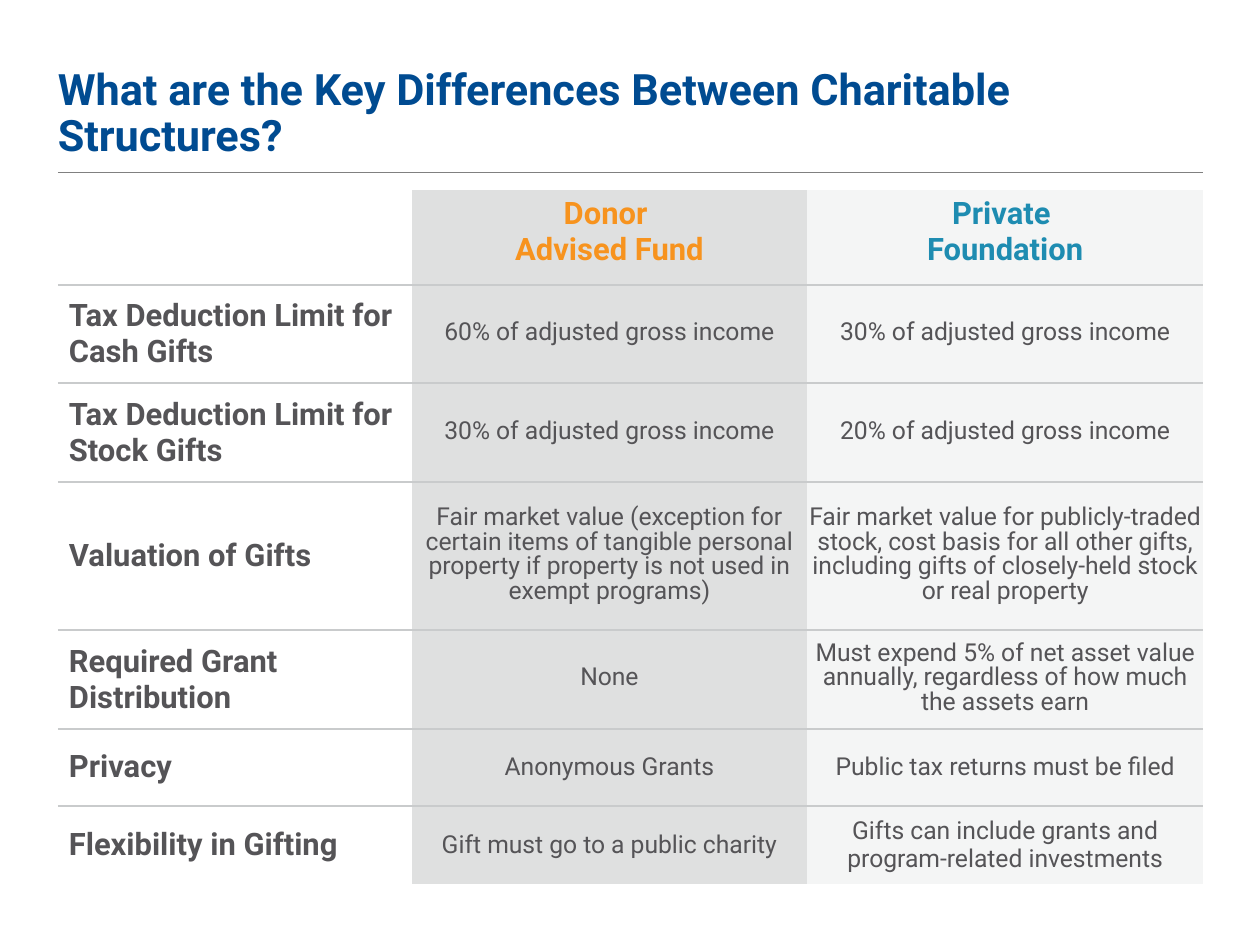
from lxml import etree
from pptx import Presentation
from pptx.dml.color import RGBColor
from pptx.enum.shapes import MSO_CONNECTOR as Connector
from pptx.enum.text import MSO_ANCHOR as Anchor, MSO_AUTO_SIZE as AutoSize, PP_ALIGN as Align
from pptx.oxml.ns import qn
from pptx.util import Cm, Pt

NAVY = RGBColor(0x00, 0x4B, 0x91)
ORANGE = RGBColor(0xF7, 0x93, 0x1E)
TEAL = RGBColor(0x1E, 0x8C, 0xB1)
INK = RGBColor(0x55, 0x54, 0x57)
RULE_GRAY = RGBColor(0x80, 0x80, 0x80)
BORDER = RGBColor(0xC9, 0xCB, 0xCC)
FUND_FILL = RGBColor(0xDF, 0xE0, 0xE0)
FOUNDATION_FILL = RGBColor(0xF4, 0xF5, 0xF5)
COLUMN_FILLS = [None, FUND_FILL, FOUNDATION_FILL]

NO_STYLE = "{2D5ABB26-0587-4C30-8999-92F81FD0307C}"
COLUMN_WIDTHS = [8.08, 9.04, 9.04]
ROW_HEIGHTS = [2.16, 2.26, 2.26, 3.38, 2.26, 1.75, 1.8]
TIGHT_ROWS = range(1, 5)

ROWS = [
    ["", "Donor \nAdvised Fund", "Private \nFoundation"],
    ["Tax Deduction Limit for Cash Gifts",
     "60% of adjusted gross income", "30% of adjusted gross income"],
    ["Tax Deduction Limit for Stock Gifts",
     "30% of adjusted gross income", "20% of adjusted gross income"],
    ["Valuation of Gifts",
     "Fair market value (exception for certain items of tangible personal "
     "property if property is not used in exempt programs)",
     "Fair market value for publicly-traded stock, cost basis for all other "
     "gifts, including gifts of closely-held stock or real property"],
    ["Required Grant Distribution", "None",
     "Must expend 5% of net asset value annually, regardless of how much "
     "the assets earn"],
    ["Privacy", "Anonymous Grants", "Public tax returns must be filed"],
    ["Flexibility in Gifting", "Gift must go to a public charity",
     "Gifts can include grants and program-related investments"],
]

# Text formats
HEADING = {"size": Pt(20), "bold": True}
VALUE = {"size": Pt(16), "bold": False}
HEADER_COLORS = [INK, ORANGE, TEAL]
LABEL_PARA = {"alignment": Align.LEFT, "space_after": Pt(12)}
VALUE_PARA = {"alignment": Align.CENTER, "space_after": Pt(12)}
TIGHT_PARA = VALUE_PARA | {"line_spacing": Pt(15.8), "space_before": Pt(7.5)}
HEADER_PARA = {"alignment": Align.CENTER}
NO_MARGINS = dict.fromkeys(
    ["margin_left", "margin_top", "margin_right", "margin_bottom"], 0)


def apply(target, formats):
    for name, value in formats.items():
        setattr(target, name, value)


def write(para, text, color, font_format, para_format):
    apply(para, para_format)
    for number, line in enumerate(text.split("\n")):
        if number:
            para.add_line_break()
        span = para.add_run()
        span.text = line
        apply(span.font, {"name": "Roboto"} | font_format)
        span.font.color.rgb = color


def add_border(cell, side):
    """Borders come before the fill in a cell's properties."""
    props = cell._tc.get_or_add_tcPr()
    line = etree.Element(qn(f"a:{side}"), w=str(Pt(1.5)))
    fill = etree.SubElement(line, qn("a:solidFill"))
    etree.SubElement(fill, qn("a:srgbClr"), val=str(BORDER))
    props.insert(len(props.findall(qn("a:lnT"))), line)


def fill_cell(cell, row, column, text):
    if row == 0:
        cell.vertical_anchor = Anchor.TOP
        formats = HEADER_COLORS[column], HEADING, HEADER_PARA
    else:
        cell.vertical_anchor = Anchor.MIDDLE
        if column == 0:
            formats = INK, HEADING, LABEL_PARA
        elif row in TIGHT_ROWS:
            apply(cell, NO_MARGINS)
            formats = INK, VALUE, TIGHT_PARA
        else:
            formats = INK, VALUE, VALUE_PARA
    if text:
        write(cell.text_frame.paragraphs[0], text, *formats)

    if COLUMN_FILLS[column] is None:
        cell.fill.background()
    else:
        cell.fill.solid()
        cell.fill.fore_color.rgb = COLUMN_FILLS[column]
    if row > 0:
        add_border(cell, "lnT")
    if row < len(ROWS) - 1:
        add_border(cell, "lnB")


def add_heading(page, left, top, width, height):
    # Title
    title = page.shapes.title
    apply(title, {"left": left, "top": top, "width": width, "height": height})
    frame = title.text_frame
    apply(frame, NO_MARGINS | {"word_wrap": True, "auto_size": AutoSize.NONE,
                               "vertical_anchor": Anchor.BOTTOM})
    write(frame.paragraphs[0],
          "What are the Key Differences Between Charitable Structures?",
          NAVY, {"size": Pt(28), "bold": True},
          {"alignment": Align.LEFT, "line_spacing": 0.9})

    # Rule under the title
    rule_top = top + height + Cm(0.25)
    rule = page.shapes.add_connector(
        Connector.STRAIGHT, left, rule_top, left + width, rule_top)
    rule.line.color.rgb = RULE_GRAY
    rule.line.width = Pt(0.25)
    etree.SubElement(rule.element.spPr, qn("a:effectLst"))


def add_comparison(page, left, top, width, height):
    frame = page.shapes.add_table(
        len(ROWS), len(COLUMN_WIDTHS), left, top, width, height)
    for style in frame.element.iter(qn("a:tableStyleId")):
        style.text = NO_STYLE
    table = frame.table
    apply(table, {"first_row": False, "horz_banding": False})
    for column, share in zip(table.columns, COLUMN_WIDTHS):
        column.width = int(width * share / sum(COLUMN_WIDTHS))
    for row, share in zip(table.rows, ROW_HEIGHTS):
        row.height = int(height * share / sum(ROW_HEIGHTS))
    for row, texts in enumerate(ROWS):
        for column, text in enumerate(texts):
            fill_cell(table.cell(row, column), row, column, text)


def main():
    deck = Presentation()
    apply(deck, {"slide_width": Cm(28.78), "slide_height": Cm(21.59)})
    page = deck.slides.add_slide(deck.slide_layouts[5])
    left, width = Cm(1.32), Cm(26.16)
    add_heading(page, left, Cm(1.5), width, Cm(2.18))
    add_comparison(page, left, Cm(4.34), width, Cm(15.87))
    deck.save("out.pptx")


if __name__ == "__main__":
    main()
